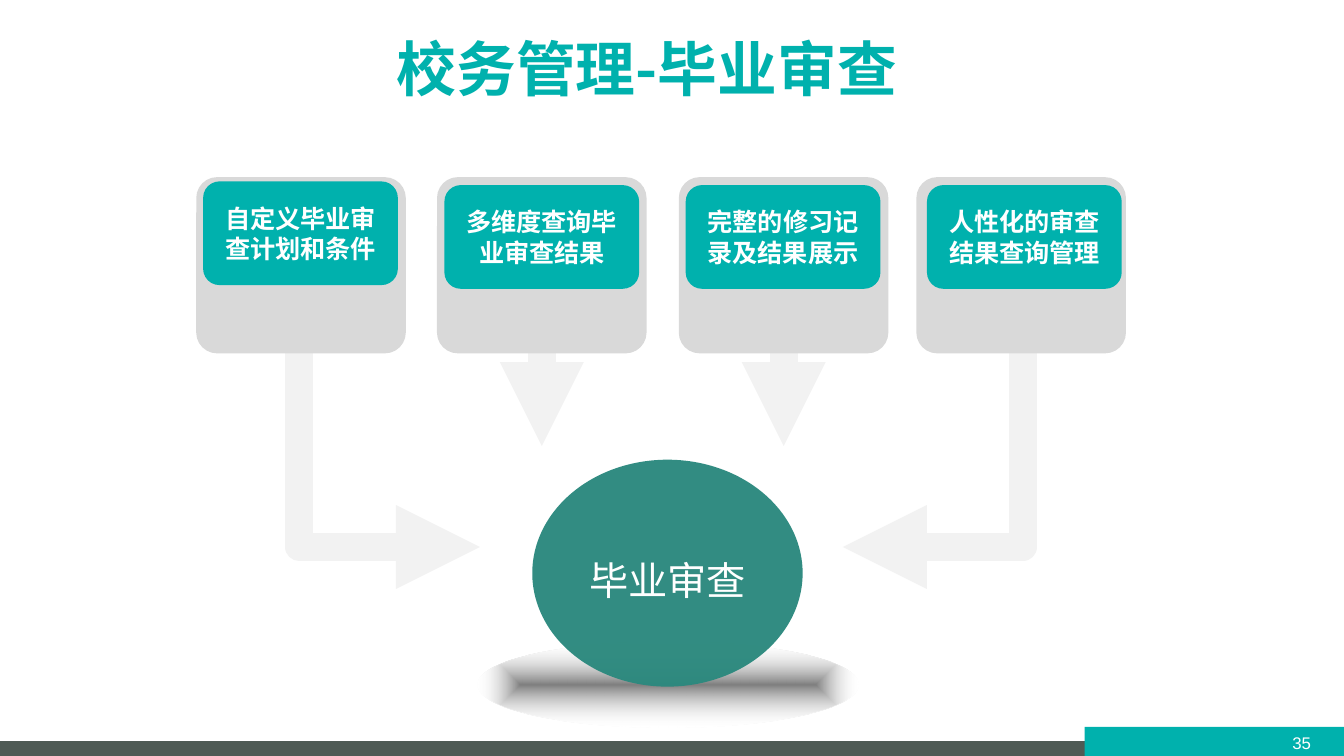
from lxml import etree
from pptx import Presentation
from pptx.dml.color import RGBColor
from pptx.enum import shapes, text
from pptx.oxml import parse_xml
from pptx.oxml.ns import qn
from pptx.util import Cm, Pt

TEAL, WHITE, ARROW_GREY = "00B1AD", "FFFFFF", "F2F2F2"
DRAWING_NS = "http://schemas.openxmlformats.org/drawingml/2006/main"
rgb = RGBColor.from_string

prs = Presentation()
prs.slide_width, prs.slide_height = Cm(25.4), Cm(14.29)
slide = prs.slides.add_slide(prs.slide_layouts[5])


def add_block(kind, left, top, width, height, color):
    block = slide.shapes.add_shape(kind, Cm(left), Cm(top), Cm(width), Cm(height))
    block.shadow.inherit = False
    block.fill.solid()
    block.fill.fore_color.rgb = rgb(color)
    block.line.fill.background()
    return block


def write(shape, words, color, **font_values):
    frame = shape.text_frame
    frame.word_wrap = True
    frame.auto_size = text.MSO_AUTO_SIZE.NONE
    frame.vertical_anchor = text.MSO_ANCHOR.MIDDLE
    paragraph = frame.paragraphs[0]
    paragraph.alignment = text.PP_ALIGN.CENTER
    run = paragraph.add_run()
    run.text = words
    run.font.color.rgb = rgb(color)
    for key, value in font_values.items():
        setattr(run.font, key, value)
    east_asian = etree.SubElement(run.font._element, qn("a:ea"))
    east_asian.set("typeface", "Noto Sans CJK SC")
    return paragraph


# Footer bars and page number
add_block(shapes.MSO_SHAPE.RECTANGLE, 0, 14.01, 25.4, 0.28, "4E5A54")
add_block(shapes.MSO_SHAPE.RECTANGLE, 20.5, 13.74, 4.9, 0.55, TEAL)
page_number = slide.shapes.add_textbox(Cm(23.9), Cm(13.67), Cm(1.4), Cm(0.76))
write(page_number, "35", WHITE, name="Arial", size=Pt(9))

# Arrows: two straight ones, two with a corner
card_top, card_width, card_height = 3.35, 3.96, 3.33
card_bottom = card_top + card_height
straight_arrows = []
for x in (10.24, 14.81):
    straight_arrows.append(slide.shapes.add_connector(
        shapes.MSO_CONNECTOR.STRAIGHT, Cm(x), Cm(card_bottom), Cm(x), Cm(8.43)))

corner_arrows = []
for start_x, tip_x in ((19.33, 15.93), (5.66, 9.07)):
    outline = slide.shapes.build_freeform(Cm(start_x), Cm(card_bottom))
    outline.add_line_segments(
        [(Cm(start_x), Cm(10.34)), (Cm(tip_x), Cm(10.34))], close=False)
    corner = outline.convert_to_shape()
    corner.shadow.inherit = False
    corner.fill.background()
    corner_arrows.append(corner)

for arrow in straight_arrows + corner_arrows:
    arrow.line.color.rgb = rgb(ARROW_GREY)
    arrow.line.width = Pt(15)
    line_xml = arrow.line._get_or_add_ln()
    etree.SubElement(line_xml, qn("a:round"))
    etree.SubElement(line_xml, qn("a:tailEnd")).set("type", "triangle")
for arrow in straight_arrows:
    etree.SubElement(arrow._element.spPr, qn("a:effectLst"))

# Grey cards
cards = []
for left in (3.71, 8.26, 12.83, 17.32):
    card = add_block(shapes.MSO_SHAPE.ROUNDED_RECTANGLE, left, card_top,
                     card_width, card_height, "D9D9D9")
    card.adjustments[0] = 0.118
    cards.append(card)
for arrow, card in zip(straight_arrows, cards[1:3]):
    arrow.begin_connect(card, 2)
    arrow.end_x = arrow.begin_x

# Teal feature labels, the first one slightly higher
features = ("自定义毕业审查计划和条件", "多维度查询毕业审查结果",
            "完整的修习记录及结果展示", "人性化的审查结果查询管理")
for index, words in enumerate(features):
    feature = add_block(shapes.MSO_SHAPE.ROUNDED_RECTANGLE, 3.84 + 4.56 * index,
                        3.5 if index else 3.43, 3.68, 1.96, TEAL)
    feature.adjustments[0] = 0.158
    write(feature, words, WHITE, name="Calibri", size=Pt(13.5), bold=True)

# Soft shade under the hub
shade = add_block(shapes.MSO_SHAPE.OVAL, 9.02, 12.12, 7.21, 1.63, "808080")
solid_fill = shade._element.spPr.find(qn("a:solidFill"))
solid_fill.getparent().replace(solid_fill, parse_xml(
    f'<a:gradFill xmlns:a="{DRAWING_NS}" rotWithShape="1"><a:gsLst>'
    '<a:gs pos="0"><a:srgbClr val="808080"/></a:gs>'
    '<a:gs pos="100000"><a:srgbClr val="FFFFFF"><a:alpha val="0"/></a:srgbClr></a:gs>'
    '</a:gsLst><a:path path="shape">'
    '<a:fillToRect l="50000" t="50000" r="50000" b="50000"/></a:path></a:gradFill>'))

# Hub
hub = add_block(shapes.MSO_SHAPE.OVAL, 10.06, 8.69, 5.11, 4.29, "2C897E")
hub_color = hub._element.spPr.find(qn("a:solidFill"))[0]
etree.SubElement(hub_color, qn("a:alpha")).set("val", "97000")
for side in ("left", "top", "right", "bottom"):
    setattr(hub.text_frame, f"margin_{side}", 0)
hub_line = write(hub, "毕业审查", WHITE, name="Calibri", size=Pt(21))
hub_line.line_spacing = 1.3

# Title
title = slide.shapes.title
title_place = {"left": 0.91, "top": 0.08, "width": 22.63, "height": 2.39}
for key, value in title_place.items():
    setattr(title, key, Cm(value))
write(title, "校务管理-毕业审查", TEAL, name="Noto Sans CJK SC", size=Pt(32), bold=True)

prs.save("out.pptx")
